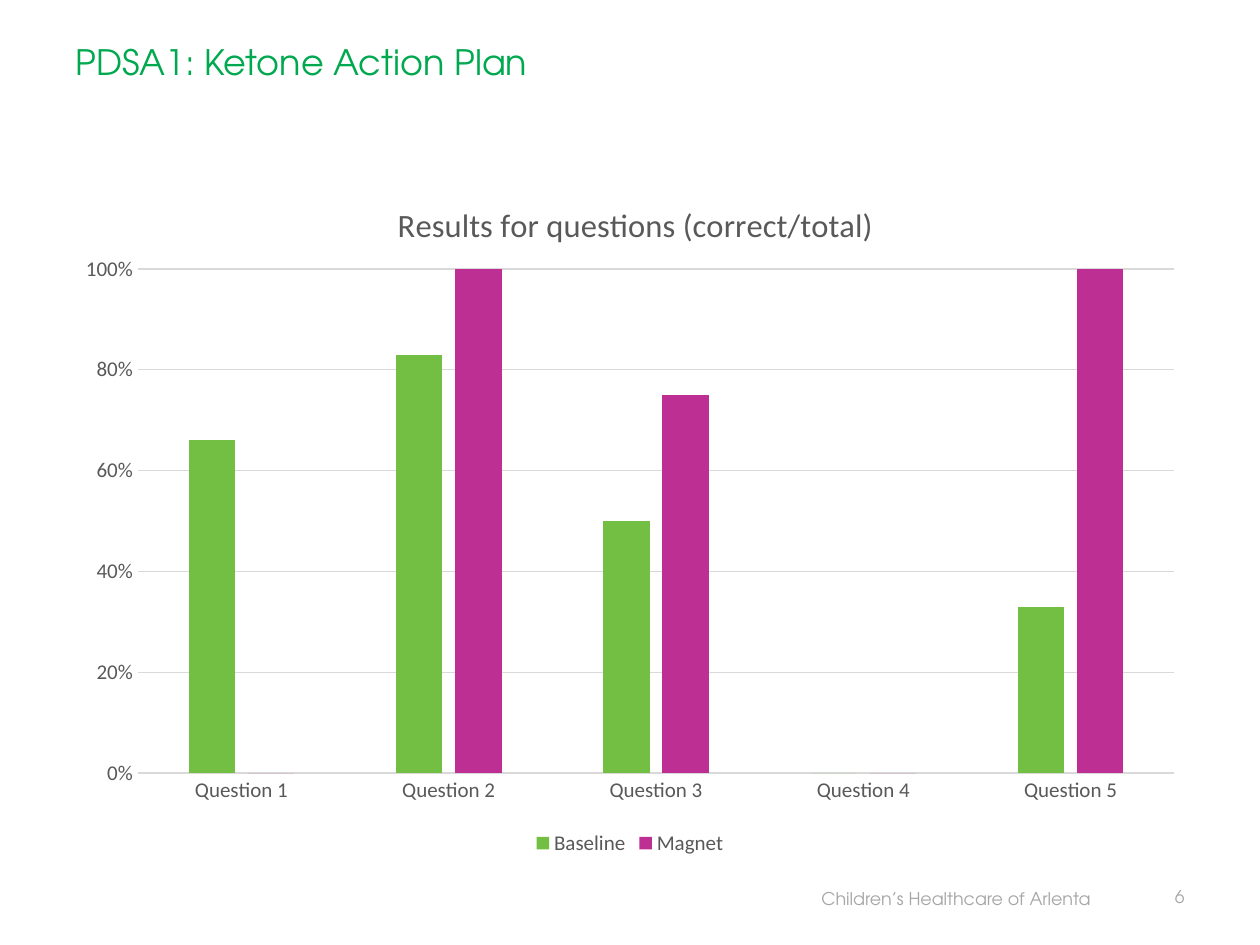
from dataclasses import dataclass

from lxml.etree import SubElement
from pptx import Presentation
from pptx.chart.data import CategoryChartData
from pptx.dml.color import RGBColor
from pptx.enum.chart import XL_CHART_TYPE as ChartType
from pptx.enum.chart import XL_LEGEND_POSITION as LegendPosition
from pptx.enum.chart import XL_TICK_MARK as TickMark
from pptx.enum.text import MSO_ANCHOR as Anchor
from pptx.enum.text import PP_ALIGN as Align
from pptx.oxml.ns import qn
from pptx.util import Cm, Pt


@dataclass(frozen=True)
class Theme:
    heading_font: str = "TeX Gyre Adventor"
    chart_font: str = "Calibri"
    green: str = "00A94F"
    footer_grey: str = "A6A6A6"
    label_grey: str = "595959"
    grid_grey: str = "D9D9D9"
    baseline: str = "72BF44"
    magnet: str = "BD2F92"
    title_size: float = 20
    footer_size: float = 10
    chart_title_size: float = 18.6
    label_size: float = 12


def set_font(font, size, color, name):
    font.size = Pt(size)
    font.name = name
    font.bold = False
    font.color.rgb = RGBColor.from_string(color)


def write_text(frame, text, *, size, color, font, align=Align.LEFT,
               anchor=Anchor.TOP, wrap=True):
    frame.word_wrap = wrap
    frame.vertical_anchor = anchor
    paragraph = frame.paragraphs[0]
    paragraph.alignment = align
    run = paragraph.add_run()
    run.text = text
    set_font(run.font, size, color, font)


def place(parent, index, **fractions):
    for old in parent.findall(qn("c:layout")):
        parent.remove(old)
    layout = SubElement(parent, qn("c:layout"))
    parent.insert(index, layout)
    manual = SubElement(layout, qn("c:manualLayout"))
    if "w" in fractions:
        SubElement(manual, qn("c:layoutTarget")).set("val", "inner")
    for axis in ("xMode", "yMode"):
        SubElement(manual, qn(f"c:{axis}")).set("val", "edge")
    for key, value in fractions.items():
        SubElement(manual, qn(f"c:{key}")).set("val", str(value))


class SlideBuilder:
    def __init__(self, presentation, theme):
        self.theme = theme
        self.slide = presentation.slides.add_slide(presentation.slide_layouts[5])

    def title(self, text, left, top, width, height):
        heading = self.slide.shapes.title
        heading.left, heading.top = Cm(left), Cm(top)
        heading.width, heading.height = Cm(width), Cm(height)
        heading.text_frame.margin_bottom = Cm(0.97)
        write_text(heading.text_frame, text, size=self.theme.title_size,
                   color=self.theme.green, font=self.theme.heading_font,
                   anchor=Anchor.BOTTOM)

    def footer(self, text, left, top, width, height, **text_format):
        box = self.slide.shapes.add_textbox(Cm(left), Cm(top), Cm(width), Cm(height))
        write_text(box.text_frame, text, size=self.theme.footer_size,
                   color=self.theme.footer_grey, font=self.theme.heading_font,
                   **text_format)

    def column_chart(self, heading, questions, results, left, top, width, height):
        theme = self.theme
        data = CategoryChartData(number_format="0%")
        data.categories = questions
        for name, (shares, _) in results.items():
            data.add_series(name, shares)
        chart = self.slide.shapes.add_chart(
            ChartType.COLUMN_CLUSTERED, Cm(left), Cm(top), Cm(width), Cm(height), data
        ).chart
        set_font(chart.font, theme.label_size, theme.label_grey, theme.chart_font)

        chart.has_title = True
        write_text(chart.chart_title.text_frame, heading, size=theme.chart_title_size,
                   color=theme.label_grey, font=theme.chart_font, align=Align.CENTER)
        place(chart.chart_title._element, 1, x=0.29, y=0.05)
        place(chart._chartSpace.chart.plotArea, 0, x=0.066, y=0.154, w=0.914, h=0.721)

        chart.has_legend = True
        chart.legend.position = LegendPosition.BOTTOM
        chart.legend.include_in_layout = False

        plot = chart.plots[0]
        plot.gap_width, plot.overlap = 219, -27
        plot.vary_by_categories = False
        for series, (_, color) in zip(plot.series, results.values()):
            series.format.fill.solid()
            series.format.fill.fore_color.rgb = RGBColor.from_string(color)

        shares_axis, question_axis = chart.value_axis, chart.category_axis
        for axis in (shares_axis, question_axis):
            axis.major_tick_mark = axis.minor_tick_mark = TickMark.NONE
        shares_axis.minimum_scale, shares_axis.maximum_scale = 0, 1
        shares_axis.major_unit = 0.2
        shares_axis.tick_labels.number_format = "0%"
        shares_axis.tick_labels.number_format_is_linked = False
        shares_axis.format.line.fill.background()
        for line in (shares_axis.major_gridlines.format.line, question_axis.format.line):
            line.color.rgb = RGBColor.from_string(theme.grid_grey)
            line.width = Pt(0.75)


def main():
    presentation = Presentation()
    presentation.slide_width, presentation.slide_height = Cm(25.4), Cm(19.05)
    theme = Theme()
    builder = SlideBuilder(presentation, theme)
    builder.title("PDSA1: Ketone Action Plan", 1.27, 0.43, 22.86, 2.21)
    builder.footer("Children’s Healthcare of Arlenta", 16.31, 17.78, 6.07, 0.69, wrap=False)
    builder.footer("6", 22.02, 17.73, 2.11, 0.69, align=Align.RIGHT)
    builder.column_chart(
        "Results for questions (correct/total)",
        [f"Question {number}" for number in range(1, 6)],
        {
            "Baseline": ((0.66, 0.83, 0.5, 0, 0.33), theme.baseline),
            "Magnet": ((0, 1, 0.75, 0, 1), theme.magnet),
        },
        1.27, 3.25, 22.86, 14.1,
    )
    presentation.save("out.pptx")


if __name__ == "__main__":
    main()
